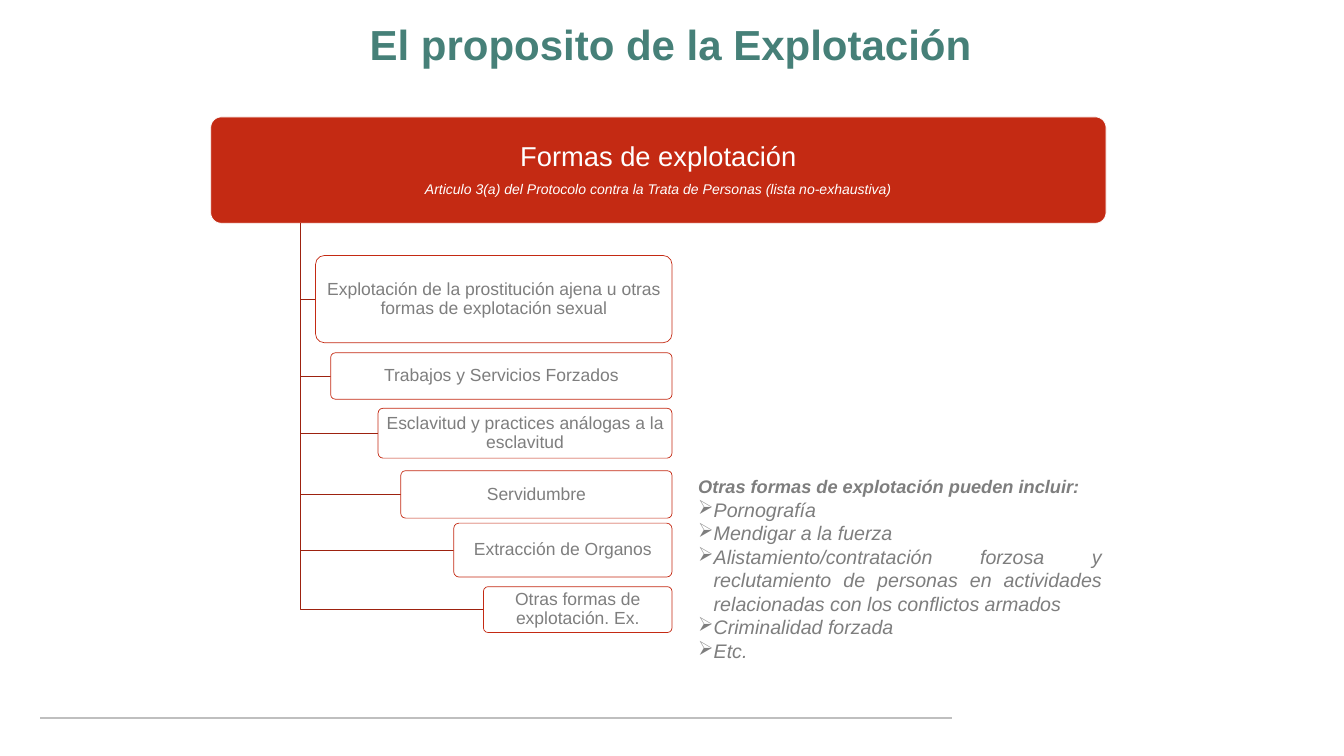
"""Build the slide on the purpose of exploitation."""
from lxml import etree
from pptx import Presentation
from pptx import util as u
from pptx.dml.color import RGBColor
from pptx.enum import shapes, text
from pptx.oxml.ns import qn

PX = u.Inches(1) // 100
WIDTH, HEIGHT = 2666, 1500
GREEN, RED, DARK_RED = "468078", "C42A13", "9D220F"
GREY, RULE, WHITE = "7E7E7E", "BFBFBF", "FFFFFF"

TITLE = "El proposito de la Explotación"
HEADING = "Formas de explotación"
SOURCE = "Articulo 3(a) del Protocolo contra la Trata de Personas (lista no-exhaustiva)"
FORMS = [  # left, top, height, wording
    (626, 507, 173, "Explotación de la prostitución ajena u otras formas de explotación sexual"),
    (656, 700, 92, "Trabajos y Servicios Forzados"),
    (750, 810, 99, "Esclavitud y practices análogas a la esclavitud"),
    (795, 934, 94, "Servidumbre"),
    (900, 1038, 107, "Extracción de Organos"),
    (959, 1164, 91, "Otras formas de explotación. Ex."),
]
OTHERS_HEADING = "Otras formas de explotación pueden incluir:"
OTHERS = [
    "Pornografía",
    "Mendigar a la fuerza",
    "Alistamiento/contratación forzosa y reclutamiento de personas en actividades "
    "relacionadas con los conflictos armados",
    "Criminalidad forzada",
    "Etc.",
]
BANNER = (418, 232, 1776, 211)
TRUNK_X, FORMS_RIGHT = 596, 1333


def px(*lengths):
    return [u.Emu(length * PX) for length in lengths]


def color(value):
    return RGBColor.from_string(value)


def style(paragraph, size, ink, bold=False, italic=False):
    for run in paragraph.runs:
        font = run.font
        font.name, font.size = "Arial", u.Pt(size)
        font.bold, font.italic = bold, italic
        font.color.rgb = color(ink)


def center(paragraph):
    paragraph.alignment = text.PP_ALIGN.CENTER
    paragraph.line_spacing = 0.9


def set_frame(frame, across, down):
    frame.word_wrap = True
    frame.vertical_anchor = text.MSO_ANCHOR.MIDDLE
    frame.margin_left = frame.margin_right = px(across)[0]
    frame.margin_top = frame.margin_bottom = px(down)[0]


def outline(shape, ink, width=1):
    shape.line.color.rgb = color(ink)
    shape.line.width = u.Pt(width)


def add_card(slide, box, fill, border, insets, wording):
    card = slide.shapes.add_shape(shapes.MSO_SHAPE.ROUNDED_RECTANGLE, *px(*box))
    card.shadow.inherit = False
    card.adjustments[0] = 0.1
    card.fill.solid()
    card.fill.fore_color.rgb = color(fill)
    outline(card, border)
    set_frame(card.text_frame, *insets)
    card.text_frame.text = wording
    for paragraph in card.text_frame.paragraphs:
        center(paragraph)
    return card


def add_branch(slide, left, middle):
    start = (TRUNK_X, BANNER[1] + BANNER[3])
    builder = slide.shapes.build_freeform(*start, scale=PX)
    builder.add_line_segments([(TRUNK_X, middle), (left, middle)], close=False)
    branch = builder.convert_to_shape()
    branch.shadow.inherit = False
    branch.fill.background()
    outline(branch, DARK_RED)


def add_bullet(paragraph):
    properties = paragraph._p.get_or_add_pPr()
    indent = px(31)[0]
    properties.set("marL", str(indent))
    properties.set("indent", str(-indent))
    etree.SubElement(properties, qn("a:buChar"), char="➢")


def add_others(slide):
    frame = slide.shapes.add_textbox(*px(1375, 939, 820, 515)).text_frame
    frame.word_wrap = True
    frame.auto_size = text.MSO_AUTO_SIZE.SHAPE_TO_FIT_TEXT
    frame.text = "\n".join([OTHERS_HEADING, *OTHERS])
    heading, *entries = frame.paragraphs
    style(heading, 26, GREY, bold=True, italic=True)
    for entry in entries:
        add_bullet(entry)
        entry.alignment = text.PP_ALIGN.JUSTIFY
        style(entry, 28, GREY, italic=True)


def main():
    deck = Presentation()
    deck.slide_width, deck.slide_height = px(WIDTH, HEIGHT)
    slide = deck.slides.add_slide(deck.slide_layouts[6])

    rule = slide.shapes.add_connector(
        shapes.MSO_CONNECTOR.STRAIGHT, *px(80, 1425, 1888, 1425))
    etree.SubElement(rule._element.spPr, qn("a:effectLst"))
    outline(rule, RULE, 2.25)

    title = slide.shapes.add_textbox(*px(80, 25, 2501, 135)).text_frame
    set_frame(title, 20, 10)
    title.text = TITLE
    center(title.paragraphs[0])
    style(title.paragraphs[0], 60, GREEN, bold=True)

    banner = add_card(slide, BANNER, RED, WHITE, (8, 5), f"{HEADING}\n{SOURCE}")
    heading, source = banner.text_frame.paragraphs
    heading.space_after = u.Pt(14)
    style(heading, 39, WHITE)
    style(source, 20, WHITE, italic=True)

    for left, top, height, wording in FORMS:
        add_branch(slide, left, top + height // 2)
        box = (left, top, FORMS_RIGHT - left, height)
        card = add_card(slide, box, WHITE, RED, (5, 3), wording)
        style(card.text_frame.paragraphs[0], 25, GREY)

    add_others(slide)
    deck.save("out.pptx")


if __name__ == "__main__":
    main()
